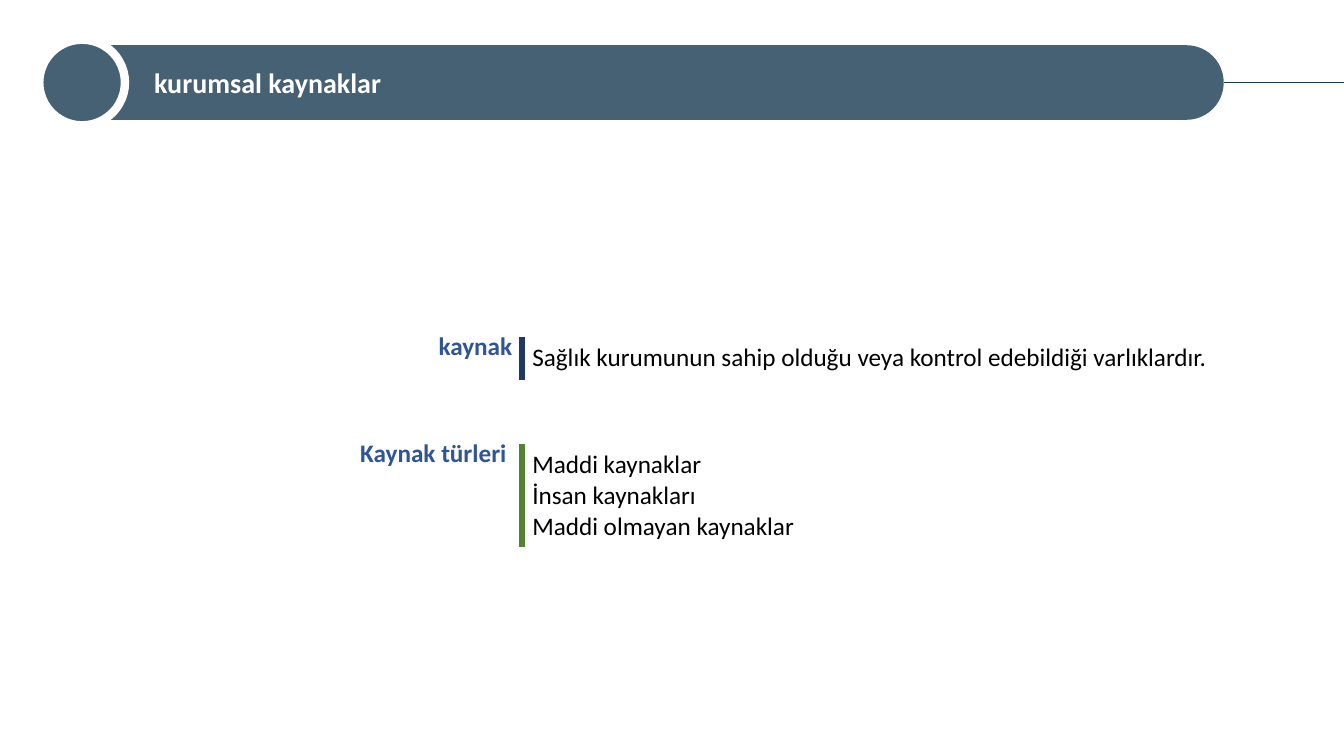
from lxml import etree
from pptx import Presentation
from pptx import util as u
from pptx.dml.color import RGBColor
from pptx.enum import shapes, text
from pptx.oxml import ns

Cm, Pt = u.Cm, u.Pt
hues = {
    "slate": "456173", "white": "FFFFFF", "black": "000000", "line": "1B3C59",
    "navy": "203864", "green": "548235", "blue": "2F5597",
}


def style(para, size, hue, bold=False):
    font = para.font
    font.name = "Calibri"
    font.size = Pt(size)
    font.bold = bold
    font.color.rgb = RGBColor.from_string(hues[hue])


def edge(cell, spot, tag, hue, width):
    line = etree.Element(ns.qn(tag), w=str(Pt(width)))
    fill = etree.SubElement(line, ns.qn("a:solidFill"))
    etree.SubElement(fill, ns.qn("a:srgbClr"), val=hues[hue])
    cell._tc.get_or_add_tcPr().insert(spot, line)


deck = Presentation()
deck.slide_width, deck.slide_height = Cm(33.87), Cm(19.05)
slide = deck.slides.add_slide(deck.slide_layouts[6])
items = slide.shapes
slate = RGBColor.from_string(hues["slate"])

bar = items.add_shape(shapes.MSO_SHAPE.ROUNDED_RECTANGLE, Cm(0.99), Cm(1.14), Cm(29.85), Cm(1.88))
bar.adjustments[0] = 0.5
bar.line.fill.background()
disc = items.add_shape(shapes.MSO_SHAPE.OVAL, Cm(0.99), Cm(1), Cm(2.16), Cm(2.16))
disc.line.color.rgb = RGBColor.from_string(hues["white"])
disc.line.width = Pt(6)
for shape in (bar, disc):
    shape.shadow.inherit = False
    shape.fill.solid()
    shape.fill.fore_color.rgb = slate

frame = bar.text_frame
frame.margin_left = Cm(2.62)
frame.vertical_anchor = text.MSO_ANCHOR.MIDDLE
title = frame.paragraphs[0]
title.text = "kurumsal kaynaklar"
title.alignment = text.PP_ALIGN.LEFT
style(title, 20, "white", True)

rule = items.add_connector(shapes.MSO_CONNECTOR.STRAIGHT, Cm(30.84), Cm(2.08), Cm(33.87), Cm(2.08))
rule.line.color.rgb = RGBColor.from_string(hues["line"])
rule.line.width = Pt(0.5)
etree.SubElement(rule._element.spPr, ns.qn("a:effectLst"))

split = 13.16
rows = [
    ("kaynak", 3.91, 8.51, 18.82, 1.02, "navy",
     ["Sağlık kurumunun sahip olduğu veya kontrol edebildiği varlıklardır."]),
    ("Kaynak türleri ", 6.12, 11.2, 19.15, 2.54, "green",
     ["Maddi kaynaklar", "İnsan kaynakları", "Maddi olmayan kaynaklar"]),
]
for name, span, top, width, height, hue, lines in rows:
    table = items.add_table(1, 1, Cm(split), Cm(top), Cm(width), Cm(height)).table
    table.first_row = table.horz_banding = False
    cell = table.cell(0, 0)
    cell.fill.solid()
    cell.fill.fore_color.rgb = RGBColor.from_string(hues["white"])
    edge(cell, 0, "a:lnL", hue, 4.5)
    edge(cell, 1, "a:lnR", "white", 1)
    edge(cell, 2, "a:lnB", "white", 3)
    cell.text = "\n".join(lines)
    for para in cell.text_frame.paragraphs:
        style(para, 18, "black")

    label = items.add_textbox(Cm(split - span), Cm(top - 0.3), Cm(span), Cm(1.02))
    label.text_frame.word_wrap = True
    label.text_frame.auto_size = text.MSO_AUTO_SIZE.SHAPE_TO_FIT_TEXT
    para = label.text_frame.paragraphs[0]
    para.text = name
    para.alignment = text.PP_ALIGN.RIGHT
    style(para, 18, "blue", True)

deck.save("out.pptx")
